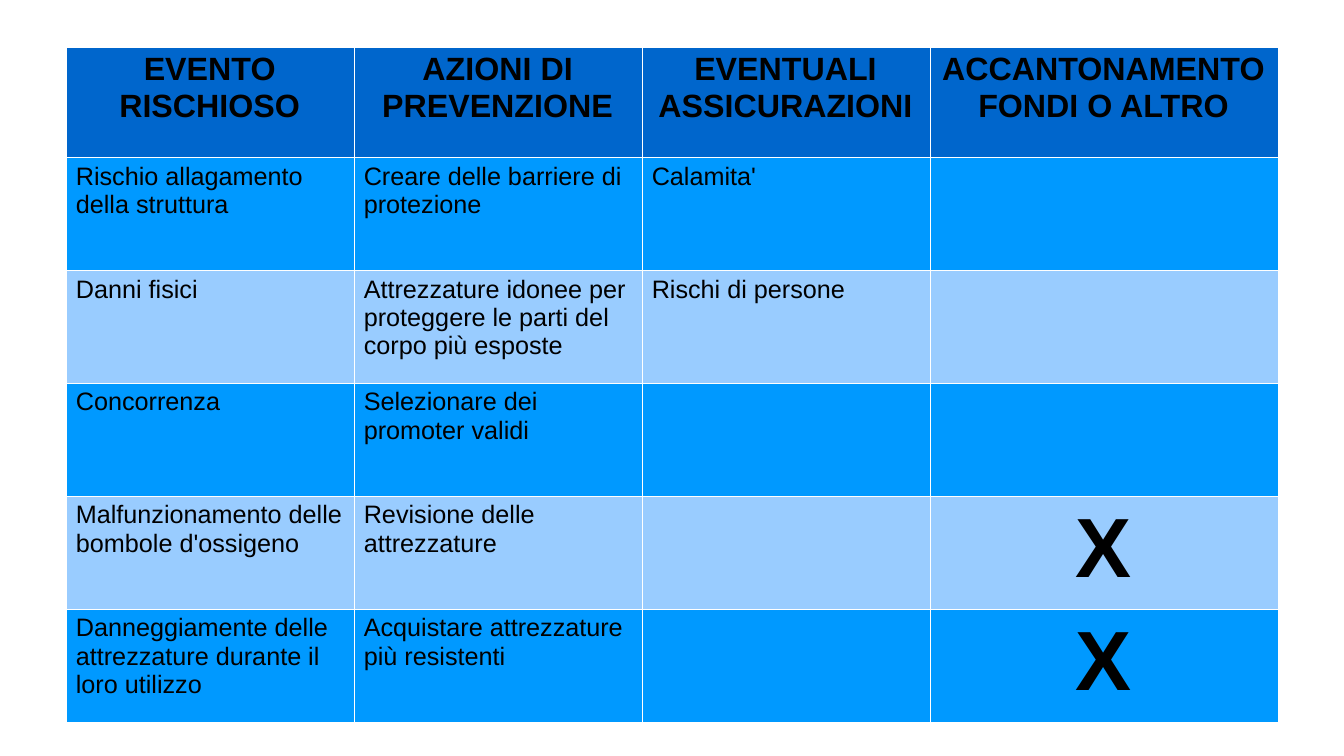
from pptx import Presentation
from pptx.dml.color import RGBColor
from pptx.enum.text import PP_ALIGN
from pptx.oxml import parse_xml
from pptx.oxml.ns import nsdecls
from pptx.util import Pt

# Content
HEADERS = ["EVENTO RISCHIOSO", "AZIONI DI PREVENZIONE",
           "EVENTUALI ASSICURAZIONI", "ACCANTONAMENTO FONDI O ALTRO"]
RISKS = [
    ("Rischio allagamento della struttura",
     "Creare delle barriere di protezione", "Calamita'", ""),
    ("Danni fisici",
     "Attrezzature idonee per proteggere le parti del corpo più esposte",
     "Rischi di persone", ""),
    ("Concorrenza", "Selezionare dei promoter validi", "", ""),
    ("Malfunzionamento delle bombole d'ossigeno",
     "Revisione delle attrezzature", "", "X"),
    ("Danneggiamente delle attrezzature durante il loro utilizzo",
     "Acquistare attrezzature più resistenti", "", "X"),
]

# Style
FONT = "Arial"
BLACK = RGBColor(0x00, 0x00, 0x00)
WHITE = RGBColor(0xFF, 0xFF, 0xFF)
HEADER_BLUE = RGBColor(0x00, 0x66, 0xCC)
BANDS = [RGBColor(0x00, 0x99, 0xFF), RGBColor(0x99, 0xCC, 0xFF)]

# Layout, in points
LEFT, TOP = 47, 33.3
COL_WIDTHS = [205.7, 205.7, 205.7, 248.6]
ROW_HEIGHTS = [79] + [80.7] * len(RISKS)
BORDER = 0.06


def add_borders(cell):
    tc_pr = cell._tc.get_or_add_tcPr()
    for i, side in enumerate(("lnL", "lnR", "lnT", "lnB")):
        tc_pr.insert(i, parse_xml(
            f'<a:{side} {nsdecls("a")} w="{int(Pt(BORDER))}"><a:solidFill>'
            f'<a:srgbClr val="{WHITE}"/></a:solidFill></a:{side}>'))


def fill_cell(cell, text, fill, size, bold, align):
    cell.fill.solid()
    cell.fill.fore_color.rgb = fill
    cell.margin_left = cell.margin_right = Pt(7.2)
    cell.margin_top = cell.margin_bottom = Pt(3.6)
    add_borders(cell)
    if text:
        p = cell.text_frame.paragraphs[0]
        p.alignment = align
        r = p.add_run()
        r.text = text
        r.font.name, r.font.size, r.font.bold = FONT, Pt(size), bold
        r.font.color.rgb = BLACK


def main():
    prs = Presentation()
    prs.slide_width, prs.slide_height = Pt(960), Pt(540)
    s = prs.slides.add_slide(prs.slide_layouts[6])

    # Table grid
    table = s.shapes.add_table(
        len(ROW_HEIGHTS), len(COL_WIDTHS), Pt(LEFT), Pt(TOP),
        Pt(sum(COL_WIDTHS)), Pt(sum(ROW_HEIGHTS))).table
    table.first_row = table.horz_banding = False
    for column, width in zip(table.columns, COL_WIDTHS):
        column.width = Pt(width)
    for row, height in zip(table.rows, ROW_HEIGHTS):
        row.height = Pt(height)

    # Header row
    for cell, text in zip(table.rows[0].cells, HEADERS):
        fill_cell(cell, text, HEADER_BLUE, 23, True, PP_ALIGN.CENTER)

    # Risk rows in alternating blues, with large check marks
    for i, risk in enumerate(RISKS):
        for cell, text in zip(table.rows[i + 1].cells, risk):
            mark = text == "X"
            fill_cell(cell, text, BANDS[i % 2], 60 if mark else 18, mark,
                      PP_ALIGN.CENTER if mark else PP_ALIGN.LEFT)

    prs.save("out.pptx")


if __name__ == "__main__":
    main()
